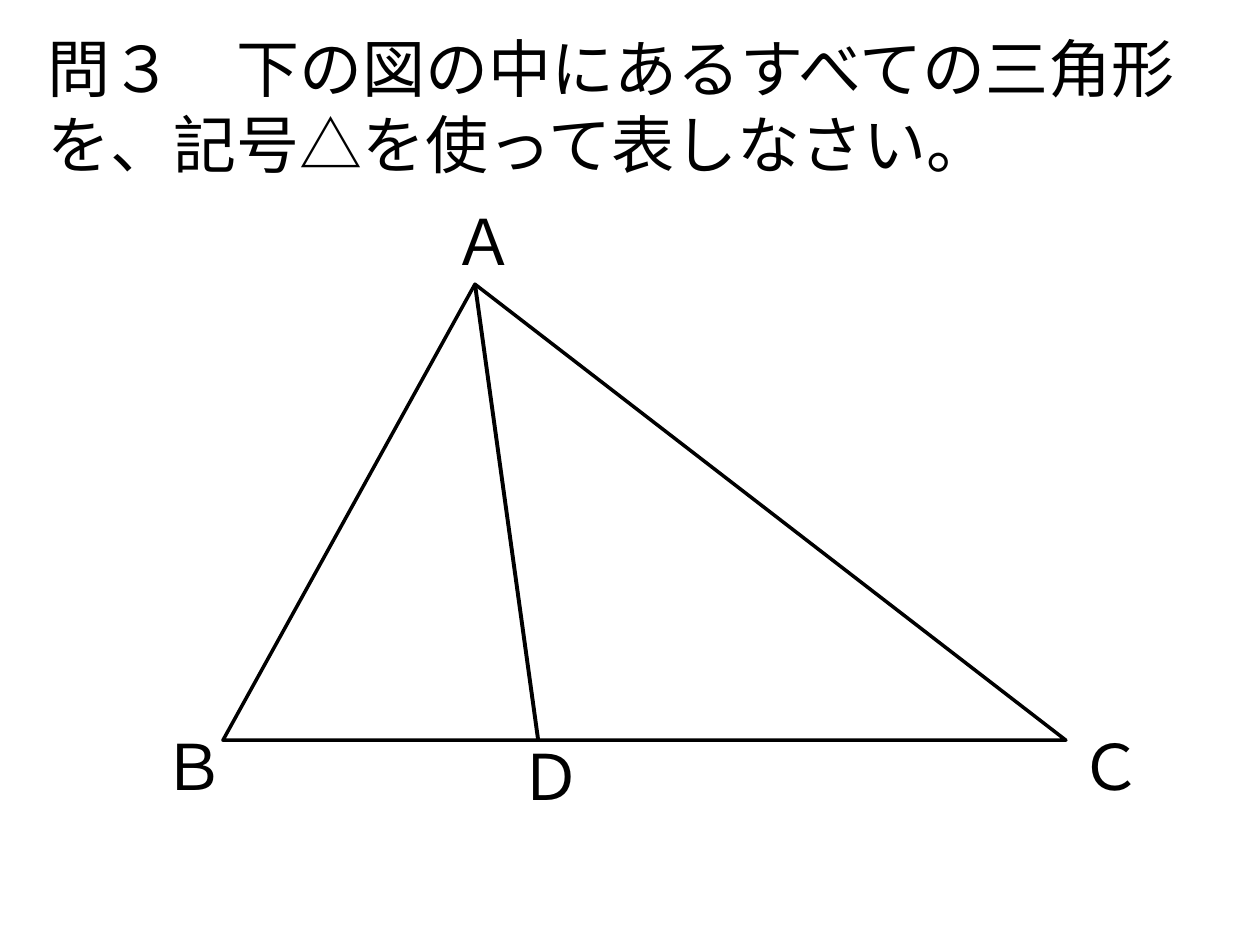
from pptx import Presentation
from pptx.dml.color import RGBColor
from pptx.enum import shapes, text
from pptx.oxml.ns import qn
from pptx.util import Pt
from lxml import etree

COLORS = {"ink": "000000"}
INK = RGBColor.from_string(COLORS["ink"])
FONT, SIZE = "Calibri", 36


def add_words(slide, words, box, wrap, anchor):
    frame = slide.shapes.add_textbox(*map(Pt, box)).text_frame
    frame.word_wrap = wrap
    frame.vertical_anchor = anchor
    frame.auto_size = text.MSO_AUTO_SIZE.NONE if wrap else text.MSO_AUTO_SIZE.SHAPE_TO_FIT_TEXT
    run = frame.paragraphs[0].add_run()
    run.text = words
    run.font.name = FONT
    run.font.size = Pt(SIZE)
    run.font.color.rgb = INK


def add_question(slide, box):
    add_words(slide, "問３　下の図の中にあるすべての三角形を、記号△を使って表しなさい。",
              box, True, text.MSO_ANCHOR.MIDDLE)


def add_figure(slide, left, top, width, height):
    apex_ratio, foot_ratio = 0.299, 0.374
    bottom = top + height
    apex_x = left + width * apex_ratio
    foot_x = left + width * foot_ratio

    # Triangle ABC
    triangle = slide.shapes.add_shape(
        shapes.MSO_SHAPE.ISOSCELES_TRIANGLE, *map(Pt, (left, top, width, height)))
    triangle.adjustments[0] = apex_ratio
    triangle.shadow.inherit = False
    triangle.fill.background()
    triangle.line.color.rgb = INK
    triangle.line.width = Pt(2)

    # Segment AD
    segment = slide.shapes.add_connector(
        shapes.MSO_CONNECTOR.STRAIGHT, *map(Pt, (apex_x, top, foot_x, bottom)))
    segment.line.color.rgb = INK
    segment.line.width = Pt(2.25)
    etree.SubElement(segment._element.spPr, qn("a:effectLst"))

    # Point names: vertex, then offset and width of the label
    points = [
        ("Ａ", apex_x, top, -20, -50.4, 40.3),
        ("Ｂ", left, bottom, -41.7, -10.8, 42.5),
        ("Ｃ", left + width, bottom, 0.7, -10.8, 41.8),
        ("Ｄ", foot_x, bottom, -18, -5, 41.8),
    ]
    for name, x, y, dx, dy, label_width in points:
        add_words(slide, name, (x + dx, y + dy, label_width, 51), False,
                  text.MSO_ANCHOR.TOP)


def main():
    deck = Presentation()
    deck.slide_width, deck.slide_height = Pt(720), Pt(540)
    slide = deck.slides.add_slide(deck.slide_layouts[6])
    add_question(slide, (20, 15, 664, 90))
    add_figure(slide, 127.4, 162.4, 481.7, 260.6)
    deck.save("out.pptx")


if __name__ == "__main__":
    main()
